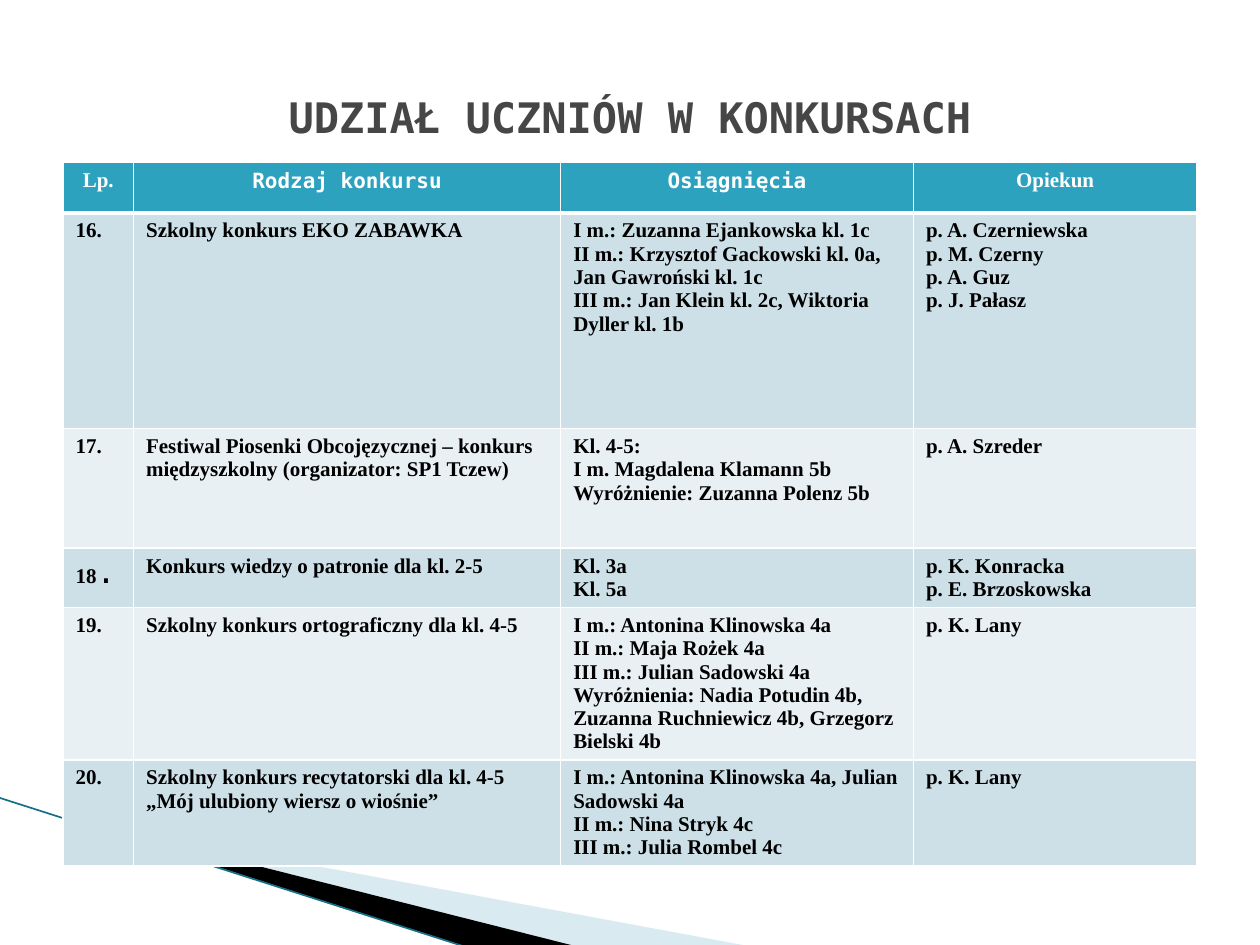
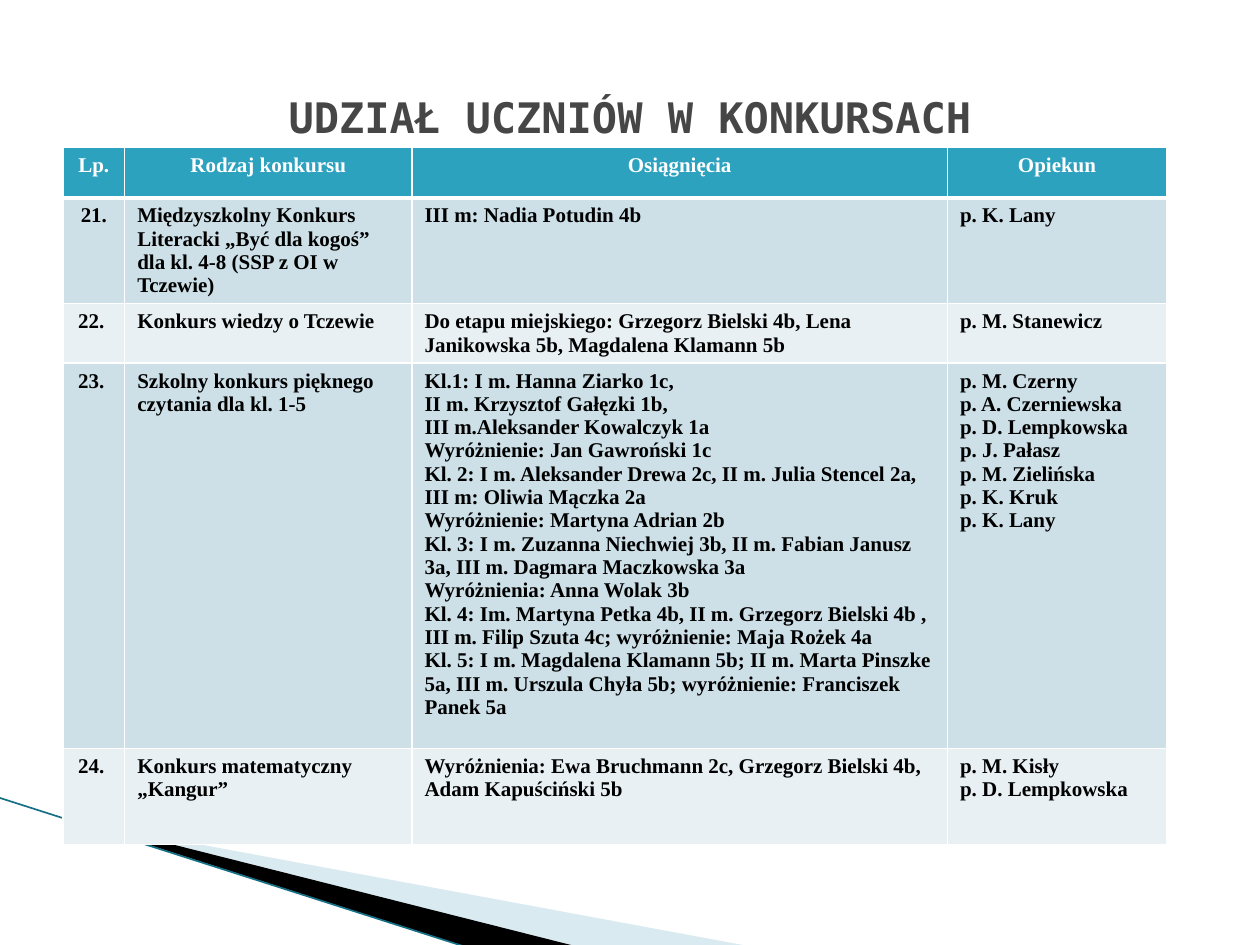
from dataclasses import dataclass, field
from typing import Any

from lxml.etree import SubElement
from pptx import Presentation
from pptx.dml.color import RGBColor as Rgb
from pptx.enum.shapes import MSO_CONNECTOR as Conn
from pptx.enum.text import MSO_ANCHOR as Anchor, PP_ALIGN as Align
from pptx.oxml.ns import qn
from pptx.util import Inches, Pt


@dataclass(frozen=True)
class Theme:
    white: str = "FFFFFF"
    text: str = "000000"
    title: str = "464646"
    header: str = "2DA2BF"
    bands: tuple[str, str] = ("CDE0E8", "E8F0F4")
    wedge: str = "A0CBDC"
    edge: str = "157086"
    serif: str = "Times New Roman"
    mono: str = "DejaVu Sans Mono"
    title_size: int = 24
    body_size: int = 12
    dot_size: int = 18


T = Theme()


@dataclass(frozen=True)
class Wedge:
    points: tuple[tuple[float, float], ...]
    color: str
    opacity: int = 100


@dataclass(frozen=True)
class Contest:
    number: str
    name: str
    results: str
    teachers: str
    height: float
    mono_dot: bool = False


@dataclass(frozen=True)
class ContestTable:
    left: float
    top: float
    widths: tuple[float, ...]
    contests: tuple[Contest, ...]
    header_fonts: tuple[str, ...] = field(default=(T.serif,) * 4)
    number_align: Any = Align.LEFT


TITLE = "UDZIAŁ UCZNIÓW W KONKURSACH"
HEADERS = ("Lp.", "Rodzaj konkursu", "Osiągnięcia", "Opiekun")
HEADER_HEIGHT = 0.4
WEDGES = (
    Wedge(((0.55, 6.51), (5.95, 7.51), (4.56, 7.51), (0.55, 6.5)), T.wedge, 40),
    Wedge(((0.53, 6.49), (4.57, 7.51), (3.72, 7.52), (0.54, 6.5)), T.text),
)

TABLES = (
    ContestTable(
        0.5, 1.29, (0.56, 3.39, 2.8, 2.25),
        (
            Contest("16.", "Szkolny konkurs EKO ZABAWKA",
                    "I m.: Zuzanna Ejankowska kl. 1c\n"
                    "II m.: Krzysztof Gackowski kl. 0a, Jan Gawroński kl. 1c\n"
                    "III m.: Jan Klein kl. 2c, Wiktoria Dyller kl. 1b",
                    "p. A. Czerniewska\np. M. Czerny\np. A. Guz\np. J. Pałasz", 1.71),
            Contest("17.", "Festiwal Piosenki Obcojęzycznej – konkurs "
                    "międzyszkolny (organizator: SP1 Tczew)",
                    "Kl. 4-5:\nI m. Magdalena Klamann 5b\n"
                    "Wyróżnienie: Zuzanna Polenz 5b",
                    "p. A. Szreder", 0.95),
            Contest("18", "Konkurs wiedzy o patronie dla kl. 2-5",
                    "Kl. 3a\nKl. 5a", "p. K. Konracka\np. E. Brzoskowska",
                    0.47, mono_dot=True),
            Contest("19.", "Szkolny konkurs ortograficzny dla kl. 4-5",
                    "I m.: Antonina Klinowska 4a\nII m.: Maja Rożek 4a\n"
                    "III m.: Julian Sadowski 4a\n"
                    "Wyróżnienia: Nadia Potudin 4b, Zuzanna Ruchniewicz 4b, "
                    "Grzegorz Bielski 4b",
                    "p. K. Lany", 1.21),
            Contest("20.", "Szkolny konkurs recytatorski dla kl. 4-5\n"
                    "„Mój ulubiony wiersz o wiośnie”",
                    "I m.: Antonina Klinowska 4a, Julian Sadowski 4a\n"
                    "II m.: Nina Stryk 4c\nIII m.: Julia Rombel 4c",
                    "p. K. Lany", 0.84),
        ),
        header_fonts=(T.serif, T.mono, T.mono, T.serif),
    ),
    ContestTable(
        0.5, 1.17, (0.49, 2.28, 4.25, 1.74),
        (
            Contest("21.", "Międzyszkolny Konkurs Literacki „Być dla kogoś”\n"
                    "dla kl. 4-8 (SSP z OI w Tczewie)",
                    "III m: Nadia Potudin 4b", "p. K. Lany", 0.84),
            Contest("22. ", "Konkurs wiedzy o Tczewie",
                    "Do etapu miejskiego: Grzegorz Bielski 4b, "
                    "Lena Janikowska 5b, Magdalena Klamann 5b",
                    "p. M. Stanewicz", 0.47),
            Contest("23. ", "Szkolny konkurs pięknego czytania dla kl. 1-5",
                    "Kl.1: I m. Hanna Ziarko 1c,\nII m. Krzysztof Gałęzki 1b,\n"
                    "III m.Aleksander Kowalczyk 1a\n"
                    "Wyróżnienie: Jan Gawroński 1c\n"
                    "Kl. 2: I m. Aleksander Drewa 2c, II m. Julia Stencel 2a, "
                    "III m: Oliwia Mączka 2a\n"
                    "Wyróżnienie: Martyna Adrian 2b\n"
                    "Kl. 3: I m. Zuzanna Niechwiej 3b, II m. Fabian Janusz 3a, "
                    "III m. Dagmara Maczkowska 3a\n"
                    "Wyróżnienia: Anna Wolak 3b\n"
                    "Kl. 4: Im. Martyna Petka 4b, II m. Grzegorz Bielski 4b , "
                    "III m. Filip Szuta 4c; wyróżnienie: Maja Rożek 4a\n"
                    "Kl. 5: I m. Magdalena Klamann 5b; II m. Marta Pinszke 5a, "
                    "III m. Urszula Chyła 5b; wyróżnienie: Franciszek Panek 5a",
                    "p. M. Czerny\np. A. Czerniewska\np. D. Lempkowska\n"
                    "p. J. Pałasz\np. M. Zielińska\np. K. Kruk\np. K. Lany", 3.06),
            Contest("24. ", "Konkurs matematyczny „Kangur”",
                    "Wyróżnienia: Ewa Bruchmann 2c, Grzegorz Bielski 4b, "
                    "Adam Kapuściński 5b",
                    "p. M. Kisły\np. D. Lempkowska", 0.76),
        ),
        number_align=Align.CENTER,
    ),
)


# Text
def add_run(p: Any, text: str, color: str, font: str = T.serif,
            size: int = T.body_size, bold: bool = True) -> None:
    r = p.add_run()
    r.text = text
    for name, value in {"name": font, "size": Pt(size), "bold": bold}.items():
        setattr(r.font, name, value)
    r.font.color.rgb = Rgb.from_string(color)


def add_title(s: Any) -> None:
    tf = s.shapes.add_textbox(Inches(0.5), Inches(0.3), Inches(9), Inches(1.25)).text_frame
    for name, value in {"word_wrap": True, "vertical_anchor": Anchor.MIDDLE}.items():
        setattr(tf, name, value)
    p = tf.paragraphs[0]
    p.alignment = Align.CENTER
    add_run(p, TITLE, T.title, T.mono, T.title_size)


# Corner decoration
def add_wedge(s: Any, wedge: Wedge) -> None:
    points = [(Inches(x), Inches(y)) for x, y in wedge.points]
    builder = s.shapes.build_freeform(*points[0])
    builder.add_line_segments(points[1:])
    sp = builder.convert_to_shape()
    sp.shadow.inherit = False
    sp.line.fill.background()
    sp.fill.solid()
    sp.fill.fore_color.rgb = Rgb.from_string(wedge.color)
    if wedge.opacity < 100:
        color = next(sp.fill._xPr.iter(qn("a:srgbClr")))
        SubElement(color, qn("a:alpha"), val=str(wedge.opacity * 1000))


def add_corner(s: Any) -> None:
    for wedge in WEDGES:
        add_wedge(s, wedge)
    edge = s.shapes.add_connector(Conn.STRAIGHT, Inches(-0.01), Inches(6.33),
                                  Inches(3.71), Inches(7.52))
    edge.line.width = Pt(0.95)
    edge.line.color.rgb = Rgb.from_string(T.edge)
    SubElement(edge._element.spPr, qn("a:effectLst"))


# Table
def style_cell(cell: Any, fill: str, top: int = 1, bottom: int = 1) -> None:
    tc_pr = cell._tc.get_or_add_tcPr()
    for side, width in {"L": 1, "R": 1, "T": top, "B": bottom}.items():
        ln = SubElement(tc_pr, qn(f"a:ln{side}"), w=str(Pt(width)))
        SubElement(SubElement(ln, qn("a:solidFill")), qn("a:srgbClr"), val=T.white)
    cell.fill.solid()
    cell.fill.fore_color.rgb = Rgb.from_string(fill)


def write_cell(cell: Any, text: str, color: str, align: Any, font: str = T.serif) -> None:
    tf = cell.text_frame
    for i, line in enumerate(text.split("\n")):
        p = tf.add_paragraph() if i else tf.paragraphs[0]
        p.alignment = align
        add_run(p, line, color, font)


def add_contest_table(s: Any, spec: ContestTable) -> None:
    heights = [HEADER_HEIGHT, *(c.height for c in spec.contests)]
    table = s.shapes.add_table(
        len(heights), len(HEADERS), Inches(spec.left), Inches(spec.top),
        Inches(sum(spec.widths)), Inches(sum(heights))).table
    for column, width in zip(table.columns, spec.widths):
        column.width = Inches(width)
    for row, height in zip(table.rows, heights):
        row.height = Inches(height)

    for col, (text, font) in enumerate(zip(HEADERS, spec.header_fonts)):
        cell = table.cell(0, col)
        style_cell(cell, T.header, bottom=3)
        write_cell(cell, text, T.white, Align.CENTER, font)

    for row, c in enumerate(spec.contests, start=1):
        for col, text in enumerate((c.number, c.name, c.results, c.teachers)):
            cell = table.cell(row, col)
            style_cell(cell, T.bands[(row - 1) % 2], top=3 if row == 1 else 1)
            write_cell(cell, text, T.text, Align.LEFT if col else spec.number_align)
        if c.mono_dot:
            p = table.cell(row, 0).text_frame.paragraphs[0]
            add_run(p, ".", T.text, T.mono, T.dot_size, bold=False)


def main() -> None:
    prs = Presentation()
    prs.slide_width, prs.slide_height = Inches(10), Inches(7.5)
    for spec in TABLES:
        s = prs.slides.add_slide(prs.slide_layouts[6])
        add_corner(s)
        add_contest_table(s, spec)
        add_title(s)
    prs.save("out.pptx")


if __name__ == "__main__":
    main()
